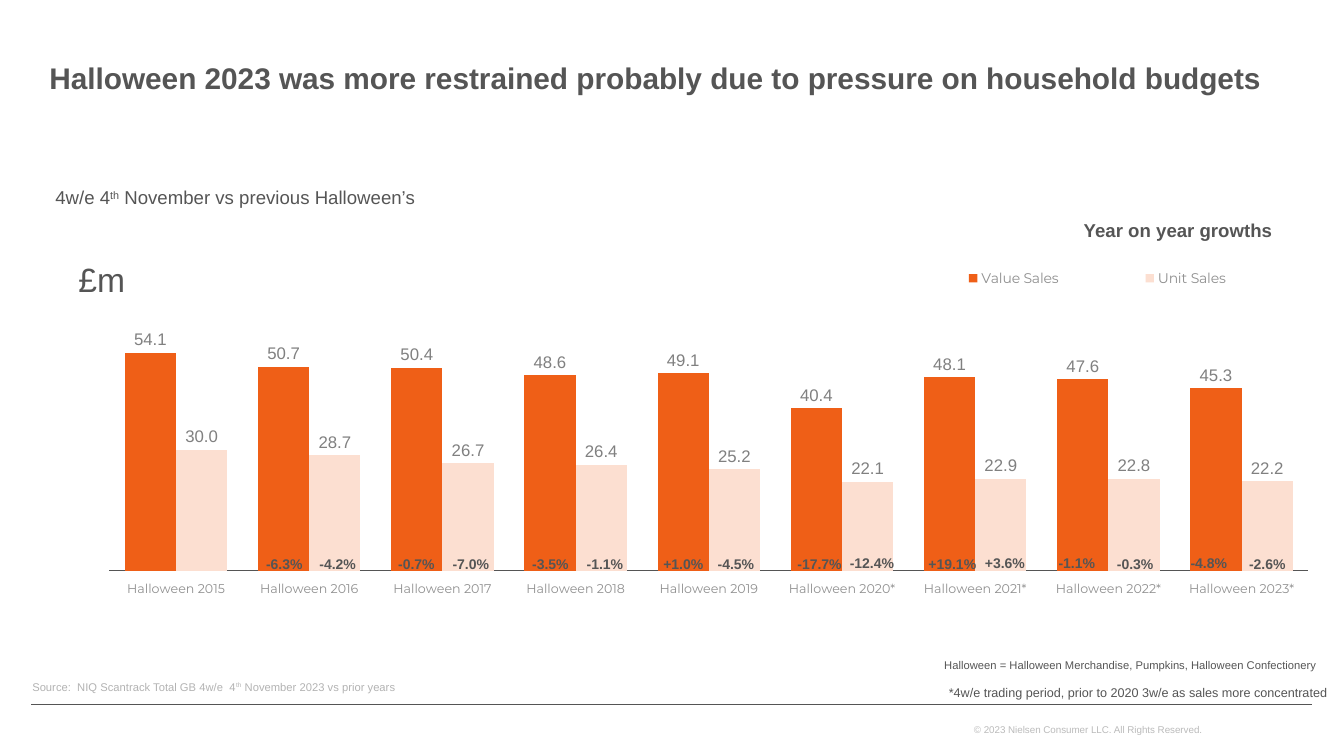
from lxml.etree import SubElement
from pptx import Presentation
from pptx.chart.data import CategoryChartData
from pptx.dml.color import RGBColor
from pptx.enum.chart import XL_CHART_TYPE, XL_LABEL_POSITION, XL_LEGEND_POSITION, XL_TICK_LABEL_POSITION, XL_TICK_MARK
from pptx.enum.shapes import MSO_CONNECTOR
from pptx.enum.text import MSO_ANCHOR, MSO_AUTO_SIZE, PP_ALIGN
from pptx.oxml.ns import qn
from pptx.util import Pt

PX = 9144  # 100 px to the inch
COLORS = {
    "text": "555555", "axis": "909090", "label": "808080", "source": "B3B3B3",
    "copyright": "BBBBBB", "value": "EF5F17", "unit": "FCDFD1",
}


def write(box, spans, size, color="text", bold=False, wrap=True, insets=(10, 5)):
    """Fill a box with one paragraph; every second span is superscript."""
    frame = box.text_frame
    frame.word_wrap = wrap
    frame.margin_left = frame.margin_right = insets[0] * PX
    frame.margin_top = frame.margin_bottom = insets[1] * PX
    paragraph = frame.paragraphs[0]
    paragraph.alignment = PP_ALIGN.LEFT
    for index, words in enumerate(spans):
        span = paragraph.add_run()
        span.text = words
        style(span.font, size, color, bold)
        if index % 2:
            span.font._element.set("baseline", "30000")
    return paragraph


def style(font, size, color, bold=False, name="Arial"):
    font.name = name
    font.size = Pt(size)
    font.bold = bold
    font.color.rgb = RGBColor.from_string(COLORS[color])


deck = Presentation()
deck.slide_width, deck.slide_height = 1333 * PX, 750 * PX
page = deck.slides.add_slide(deck.slide_layouts[1])

# Footer rule
rule = page.shapes.add_connector(MSO_CONNECTOR.STRAIGHT, 31 * PX, 699 * PX, 1301 * PX, 699 * PX)
rule.line.color.rgb = RGBColor.from_string(COLORS["text"])
rule.line.width = Pt(1.25)
SubElement(rule._element.spPr, qn("a:effectLst"))

# Title and source line
title, source = page.placeholders
for box, bounds, anchor in (
    (title, (49, 46, 1226, 79), MSO_ANCHOR.TOP),
    (source, (32, 653, 1267, 40), MSO_ANCHOR.BOTTOM),
):
    box.left, box.top, box.width, box.height = [length * PX for length in bounds]
    box.text_frame.auto_size = MSO_AUTO_SIZE.NONE
    box.text_frame.vertical_anchor = anchor
write(title, ["Halloween 2023 was more restrained probably due to pressure on household budgets"],
      21.3, bold=True, insets=(0, 13))
source_line = write(source, ["Source:  NIQ Scantrack Total GB 4w/e  4", "th", " November 2023 vs prior years"],
                    8, "source", insets=(0, 5))
source_line.space_before = Pt(0)
properties = source_line._p.get_or_add_pPr()
properties.set("marL", "0")
properties.set("indent", "0")
SubElement(properties, qn("a:buNone"))

# Sales chart
sales = CategoryChartData(number_format="0.0")
sales.categories = [f"Halloween {year}{'*' if year >= 2020 else ''}" for year in range(2015, 2024)]
sales.add_series("Value Sales", (54.1, 50.7, 50.4, 48.6, 49.1, 40.4, 48.1, 47.6, 45.3))
sales.add_series("Unit Sales", (30.0, 28.7, 26.7, 26.4, 25.2, 22.1, 22.9, 22.8, 22.2))
chart = page.shapes.add_chart(XL_CHART_TYPE.COLUMN_CLUSTERED, 68 * PX, 252 * PX,
                              1230 * PX, 370 * PX, sales).chart
chart.has_title = False
style(chart.font, 10, "text", name="Montserrat")

plot = chart.plots[0]
plot.gap_width = 60
plot.overlap = 0
plot.vary_by_categories = False
for series, color in zip(plot.series, ("value", "unit")):
    series.format.fill.solid()
    series.format.fill.fore_color.rgb = RGBColor.from_string(COLORS[color])
    labels = series.data_labels
    labels.show_value = True
    labels.number_format = "#,##0.0"
    labels.number_format_is_linked = False
    labels.position = XL_LABEL_POSITION.OUTSIDE_END
    style(labels.font, 12, "label")

years = chart.category_axis
years.major_tick_mark = years.minor_tick_mark = XL_TICK_MARK.NONE
years.tick_label_position = XL_TICK_LABEL_POSITION.LOW
years.format.line.color.rgb = RGBColor.from_string(COLORS["text"])
years.format.line.width = Pt(0.75)
style(years.tick_labels.font, 9, "axis", name="Montserrat")

amounts = chart.value_axis
amounts.minimum_scale, amounts.maximum_scale = 0, 60
amounts.has_major_gridlines = False
amounts.visible = False

chart.has_legend = True
legend = chart.legend
legend.position = XL_LEGEND_POSITION.TOP
legend.include_in_layout = False
style(legend.font, 10, "axis", name="Montserrat")

plot_area = chart._chartSpace.chart.plotArea
for part, index, target, fractions in (
    (plot_area, 0, "inner", (0.033, 0.202, 0.967, 0.648)),
    (legend._element, 1, None, (0.66, 0.02, 0.34, 0.09)),
):
    for old in part.findall(qn("c:layout")):
        part.remove(old)
    layout = SubElement(part, qn("c:layout"))
    part.insert(index, layout)
    manual = SubElement(layout, qn("c:manualLayout"))
    if target:
        SubElement(manual, qn("c:layoutTarget")).set("val", target)
    for mode in ("xMode", "yMode"):
        SubElement(manual, qn(f"c:{mode}")).set("val", "edge")
    for side, fraction in zip("xywh", fractions):
        SubElement(manual, qn(f"c:{side}")).set("val", str(fraction))

# Year on year growths: words, left, top, width
growths = [
    ("-6.3%", 254, 546, 125), ("-4.2%", 307, 546, 131),
    ("-0.7%", 385, 546, 125), ("-7.0%", 439, 546, 59),
    ("-3.5%", 518, 546, 131), ("-1.1%", 572, 546, 60),
    ("+1.0%", 648, 546, 61), ("-4.5%", 702, 546, 66),
    ("-17.7%", 781, 546, 65), ("-12.4%", 833, 545, 69),
    ("+19.1%", 911, 546, 72), ("+3.6%", 967, 545, 60),
    ("-1.1%", 1040, 545, 72), ("-0.3%", 1098, 546, 73),
    ("-4.8%", 1171, 545, 72), ("-2.6%", 1229, 546, 73),
]
for words, left, top, width in growths:
    box = page.shapes.add_textbox(left * PX, top * PX, width * PX, 27 * PX)
    write(box, [words], 10, bold=True)
    box.text_frame.auto_size = MSO_AUTO_SIZE.SHAPE_TO_FIT_TEXT

# Headings and notes: bounds, spans, size, color, bold, wrap, insets
notes = [
    ((45, 180, 382, 33), ["4w/e 4", "th", " November vs previous Halloween’s"], 13.3, "text", False, False, (10, 5)),
    ((68, 252, 86, 50), ["£m"], 24, "text", False, True, (10, 5)),
    ((1065, 212, 209, 33), ["Year on year growths"], 13.3, "text", True, False, (10, 5)),
    ((923, 648, 393, 24), ["Halloween = Halloween Merchandise, Pumpkins, Halloween Confectionery"],
     8, "text", False, False, (10, 5)),
    ((941, 675, 385, 28), ["*4w/e trading period, prior to 2020 3w/e as sales more concentrated"],
     9, "text", False, False, (0, 5)),
    ((966, 713, 284, 22), ["© 2023 Nielsen Consumer LLC. All Rights Reserved."],
     7, "copyright", False, True, (0, 5)),
]
for bounds, spans, size, color, bold, wrap, insets in notes:
    box = page.shapes.add_textbox(*[length * PX for length in bounds])
    paragraph = write(box, spans, size, color, bold, wrap, insets)
    if spans[0].startswith("Halloween ="):
        paragraph.alignment = PP_ALIGN.RIGHT
    if not spans[0].startswith("*"):
        box.text_frame.auto_size = MSO_AUTO_SIZE.SHAPE_TO_FIT_TEXT

deck.save("out.pptx")
